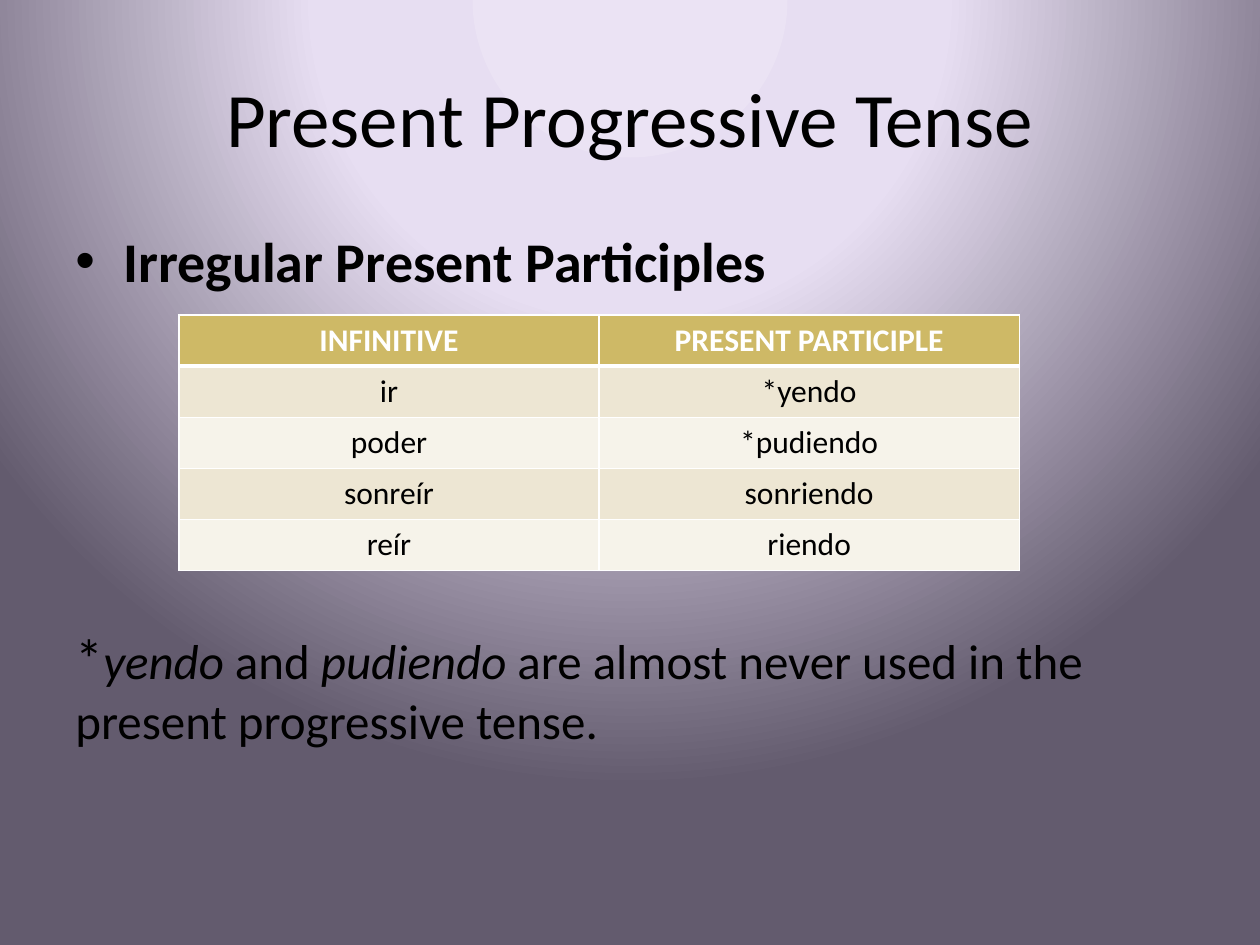
import dataclasses
import typing

import lxml.etree
import pptx
import pptx.dml.color
import pptx.enum.text
import pptx.oxml
import pptx.oxml.ns
import pptx.util

Inches = pptx.util.Inches
Pt = pptx.util.Pt
qn = pptx.oxml.ns.qn
CENTER = pptx.enum.text.PP_ALIGN.CENTER
MIDDLE = pptx.enum.text.MSO_ANCHOR.MIDDLE

FONT = "Calibri"
COLORS = {
    "glow": "EBE3F4",
    "lilac": "E7DEF2",
    "dusk": "635B6E",
    "text": "000000",
    "white": "FFFFFF",
    "header": "CEB966",
    "band_dark": "EDE6D3",
    "band_light": "F6F3EA",
}
BACKDROP_STOPS = [(0, "glow"), (40, "lilac"), (100, "dusk")]
VERBS = [
    ("INFINITIVE", "PRESENT PARTICIPLE"),
    ("ir", "*yendo"),
    ("poder", "*pudiendo"),
    ("sonreír", "sonriendo"),
    ("reír", "riendo"),
]
TABLE_WIDTH, TABLE_HEIGHT = 6.67, 2.03
BODY_SPACE = 6.4
TABLE_GAP = 188.4


@dataclasses.dataclass
class Span:
    text: str
    size: float
    bold: bool = False
    italic: bool = False
    color: str = "text"


def rgb(name: str) -> pptx.dml.color.RGBColor:
    return pptx.dml.color.RGBColor.from_string(COLORS[name])


def add_spans(para: typing.Any, spans: list[Span]) -> None:
    for span in spans:
        run = para.add_run()
        run.text = span.text
        run.font.name = FONT
        run.font.size = Pt(span.size)
        run.font.bold = span.bold
        run.font.italic = span.italic
        run.font.color.rgb = rgb(span.color)


def add_text_box(page: typing.Any, left: float, top: float, width: float, height: float) -> typing.Any:
    box = page.shapes.add_textbox(Inches(left), Inches(top), Inches(width), Inches(height))
    box.text_frame.word_wrap = True
    return box.text_frame


def add_bullet(para: typing.Any) -> None:
    properties = para._p.get_or_add_pPr()
    properties.set("marL", str(Inches(0.38)))
    properties.set("indent", str(Inches(-0.38)))
    font = lxml.etree.SubElement(properties, qn("a:buFont"))
    font.set("typeface", "Arial")
    lxml.etree.SubElement(properties, qn("a:buChar")).set("char", "•")


def paint_backdrop(page: typing.Any) -> None:
    fill = page.background.fill
    fill.gradient()
    gradient = page.background._cSld.find(".//" + qn("a:gradFill"))
    for child in list(gradient):
        gradient.remove(child)
    stops = lxml.etree.SubElement(gradient, qn("a:gsLst"))
    for percent, color in BACKDROP_STOPS:
        stop = lxml.etree.SubElement(stops, qn("a:gs"), pos=str(percent * 1000))
        lxml.etree.SubElement(stop, qn("a:srgbClr"), val=COLORS[color])
    shade = lxml.etree.SubElement(gradient, qn("a:path"))
    shade.set("path", "circle")
    lxml.etree.SubElement(shade, qn("a:fillToRect"), l="50000", t="-80000", r="50000", b="180000")


def add_borders(cell: typing.Any, widths: dict[str, float]) -> None:
    properties = cell._tc.get_or_add_tcPr()
    for side, width in widths.items():
        line = lxml.etree.SubElement(properties, qn(f"a:ln{side}"), w=str(Pt(width)))
        solid = lxml.etree.SubElement(line, qn("a:solidFill"))
        lxml.etree.SubElement(solid, qn("a:srgbClr"), val=COLORS["white"])


def add_verb_table(page: typing.Any) -> None:
    table = page.shapes.add_table(
        len(VERBS), 2, Inches(1.42), Inches(2.5), Inches(TABLE_WIDTH), Inches(TABLE_HEIGHT)
    ).table
    for column in table.columns:
        column.width = Inches(TABLE_WIDTH / 2)
    for index, words in enumerate(VERBS):
        table.rows[index].height = Inches(TABLE_HEIGHT / len(VERBS))
        header = index == 0
        band = "header" if header else "band_dark" if index % 2 else "band_light"
        widths = {"L": 1, "R": 1, "T": 3 if index == 1 else 1, "B": 3 if header else 1}
        for cell, word in zip(table.rows[index].cells, words):
            add_borders(cell, widths)
            cell.fill.solid()
            cell.fill.fore_color.rgb = rgb(band)
            para = cell.text_frame.paragraphs[0]
            para.alignment = CENTER
            add_spans(para, [Span(word, 18, bold=header, color="white" if header else "text")])


def main() -> None:
    deck = pptx.Presentation()
    deck.slide_width, deck.slide_height = Inches(10), Inches(7.5)
    page = deck.slides.add_slide(deck.slide_layouts[6])
    paint_backdrop(page)

    title = add_text_box(page, 0.5, 0.3, 9, 1.25)
    title.vertical_anchor = MIDDLE
    title.paragraphs[0].alignment = CENTER
    add_spans(title.paragraphs[0], [Span("Present Progressive Tense", 44)])

    body = add_text_box(page, 0.5, 1.75, 9, 4.42)
    heading = body.paragraphs[0]
    heading.space_before = Pt(BODY_SPACE)
    add_bullet(heading)
    add_spans(heading, [Span("Irregular Present Participles", 32, bold=True)])

    note = body.add_paragraph()
    note.space_before = Pt(TABLE_GAP)
    add_spans(note, [
        Span("*", 32),
        Span("yendo", 28, italic=True),
        Span(" and ", 28),
        Span("pudiendo", 28, italic=True),
        Span(" are almost never used in the present progressive tense.", 28),
    ])

    add_verb_table(page)
    deck.save("out.pptx")


if __name__ == "__main__":
    main()
